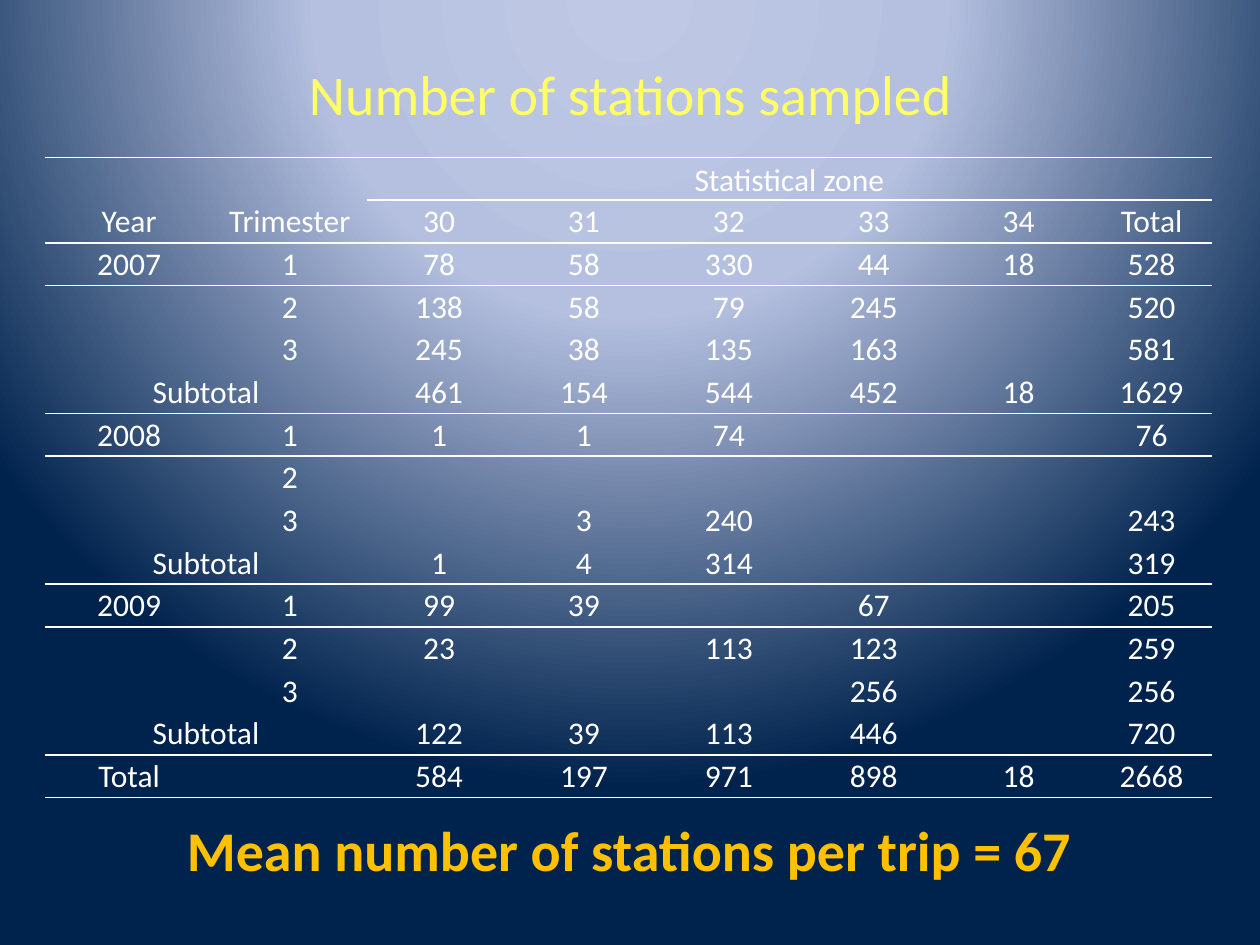
from lxml.etree import SubElement
from pptx import Presentation
from pptx.dml.color import RGBColor
from pptx.enum.text import MSO_ANCHOR, PP_ALIGN
from pptx.oxml import parse_xml
from pptx.oxml.ns import nsdecls, qn
from pptx.util import Inches, Pt

TITLE = "Number of stations sampled"
CONCLUSION = "Mean number of stations per trip = 67"
STATIONS = [
    ("", "", "Statistical zone", "", "", "", "", ""),
    ("Year", "Trimester", 30, 31, 32, 33, 34, "Total"),
    (2007, 1, 78, 58, 330, 44, 18, 528),
    ("", 2, 138, 58, 79, 245, "", 520),
    ("", 3, 245, 38, 135, 163, "", 581),
    ("Subtotal", "", 461, 154, 544, 452, 18, 1629),
    (2008, 1, 1, 1, 74, "", "", 76),
    ("", 2, "", "", "", "", "", ""),
    ("", 3, "", 3, 240, "", "", 243),
    ("Subtotal", "", 1, 4, 314, "", "", 319),
    (2009, 1, 99, 39, "", 67, "", 205),
    ("", 2, 23, "", 113, 123, "", 259),
    ("", 3, "", "", "", 256, "", 256),
    ("Subtotal", "", 122, 39, 113, 446, "", 720),
    ("Total", "", 584, 197, 971, 898, 18, 2668),
]

WHITE = RGBColor(0xFF, 0xFF, 0xFF)
YELLOW = RGBColor(0xFF, 0xFF, 0x66)
GOLD = RGBColor(0xFF, 0xC0, 0x00)
GRADIENT = [
    (0, RGBColor(0xBF, 0xC9, 0xE5)),
    (40, RGBColor(0xB5, 0xC0, 0xE0)),
    (100, RGBColor(0x00, 0x23, 0x4D)),
]
FONT = "Calibri"
SLIDE_WIDTH, SLIDE_HEIGHT = 10, 7.5
TEXT_HEIGHT = 0.64
TABLE_LEFT, TABLE_TOP, TABLE_HEIGHT = 0.36, 1.25, 5.08
COLUMN_WIDTHS = [1.33, 1.22] + [1.15] * 5 + [0.96]
FIRST_ZONE_COLUMN = 2
NO_STYLE_NO_GRID = "{2D5ABB26-0587-4C30-8999-92F81FD0307C}"
CELL_FORMAT = {
    "margin_left": Inches(0.01),
    "margin_right": Inches(0.01),
    "margin_top": Inches(0.01),
    "margin_bottom": 0,
}


def set_background(slide):
    stops = "".join(
        f'<a:gs pos="{share * 1000}"><a:srgbClr val="{color}"/></a:gs>'
        for share, color in GRADIENT
    )
    background = parse_xml(
        f'<p:bg {nsdecls("p", "a")}><p:bgPr><a:gradFill rotWithShape="1">'
        f'<a:gsLst>{stops}</a:gsLst><a:path path="circle">'
        '<a:fillToRect l="50000" t="-80000" r="50000" b="180000"/>'
        "</a:path></a:gradFill><a:effectLst/></p:bgPr></p:bg>"
    )
    slide.element.cSld.insert(0, background)


def write_centered(text_frame, text, size, color, bold=False):
    paragraph = text_frame.paragraphs[0]
    paragraph.alignment = PP_ALIGN.CENTER
    font = paragraph.font
    if text != "":
        run = paragraph.add_run()
        run.text = str(text)
        font = run.font
    font_format = {"name": FONT, "size": Pt(size), "bold": bold}
    for name, value in font_format.items():
        setattr(font, name, value)
    font.color.rgb = color


def add_heading(slide, text, left, top, width, color, bold=False, wrap=True):
    box = slide.shapes.add_textbox(
        Inches(left), Inches(top), Inches(width), Inches(TEXT_HEIGHT))
    box.text_frame.word_wrap = wrap
    box.text_frame.vertical_anchor = MSO_ANCHOR.MIDDLE
    write_centered(box.text_frame, text, 32, color, bold)


def add_border(cell, tag):
    line = SubElement(cell._tc.get_or_add_tcPr(), qn(tag), w=str(Pt(1)))
    fill = SubElement(line, qn("a:solidFill"))
    SubElement(fill, qn("a:srgbClr"), val=str(WHITE))


def has_rule_below(row, column):
    if row == 0:
        return column >= FIRST_ZONE_COLUMN
    return STATIONS[row][0] in ("Year", "Subtotal", "Total")


def add_station_table(slide):
    row_count, column_count = len(STATIONS), len(COLUMN_WIDTHS)
    frame = slide.shapes.add_table(
        row_count, column_count, Inches(TABLE_LEFT), Inches(TABLE_TOP),
        Inches(sum(COLUMN_WIDTHS)), Inches(TABLE_HEIGHT))
    table = frame.table
    table.first_row = table.horz_banding = False
    table._tbl.tblPr.find(qn("a:tableStyleId")).text = NO_STYLE_NO_GRID
    for column, width in zip(table.columns, COLUMN_WIDTHS):
        column.width = Inches(width)

    for row, values in enumerate(STATIONS):
        for column, value in enumerate(values):
            cell = table.cell(row, column)
            for name, setting in CELL_FORMAT.items():
                setattr(cell, name, setting)
            cell.vertical_anchor = MSO_ANCHOR.BOTTOM if row == 0 else MSO_ANCHOR.MIDDLE
            write_centered(cell.text_frame, value, 18, WHITE)
            if row == 0 or has_rule_below(row - 1, column):
                add_border(cell, "a:lnT")
            if has_rule_below(row, column):
                add_border(cell, "a:lnB")
            cell.fill.background()
        if values[0] == "Subtotal":
            table.cell(row, 0).merge(table.cell(row, 1))
    table.cell(0, FIRST_ZONE_COLUMN).merge(table.cell(0, column_count - 1))


def main():
    presentation = Presentation()
    presentation.slide_width = Inches(SLIDE_WIDTH)
    presentation.slide_height = Inches(SLIDE_HEIGHT)
    slide = presentation.slides.add_slide(presentation.slide_layouts[6])
    set_background(slide)
    add_heading(slide, TITLE, 1.92, 0.42, 6.17, YELLOW)
    add_heading(slide, CONCLUSION, 1.35, 6.42, 7.29, GOLD, bold=True, wrap=False)
    add_station_table(slide)
    presentation.save("out.pptx")


if __name__ == "__main__":
    main()
